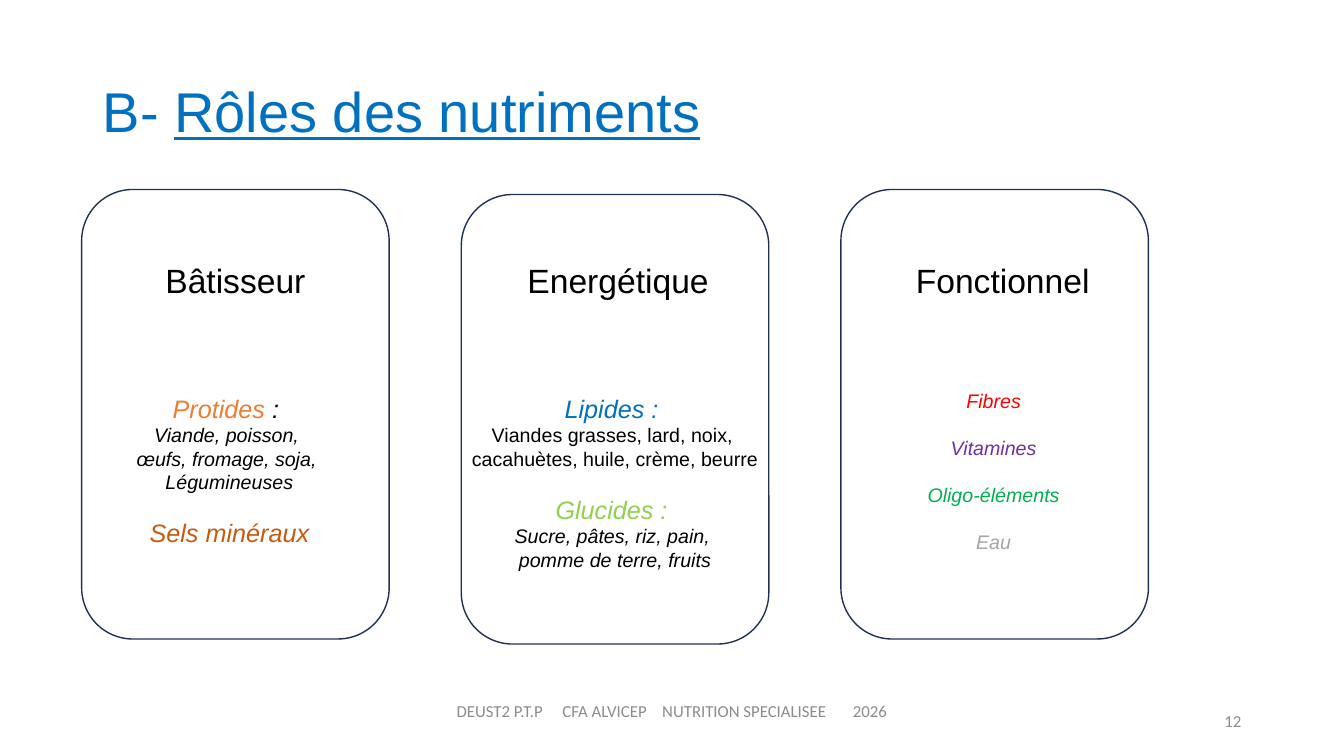
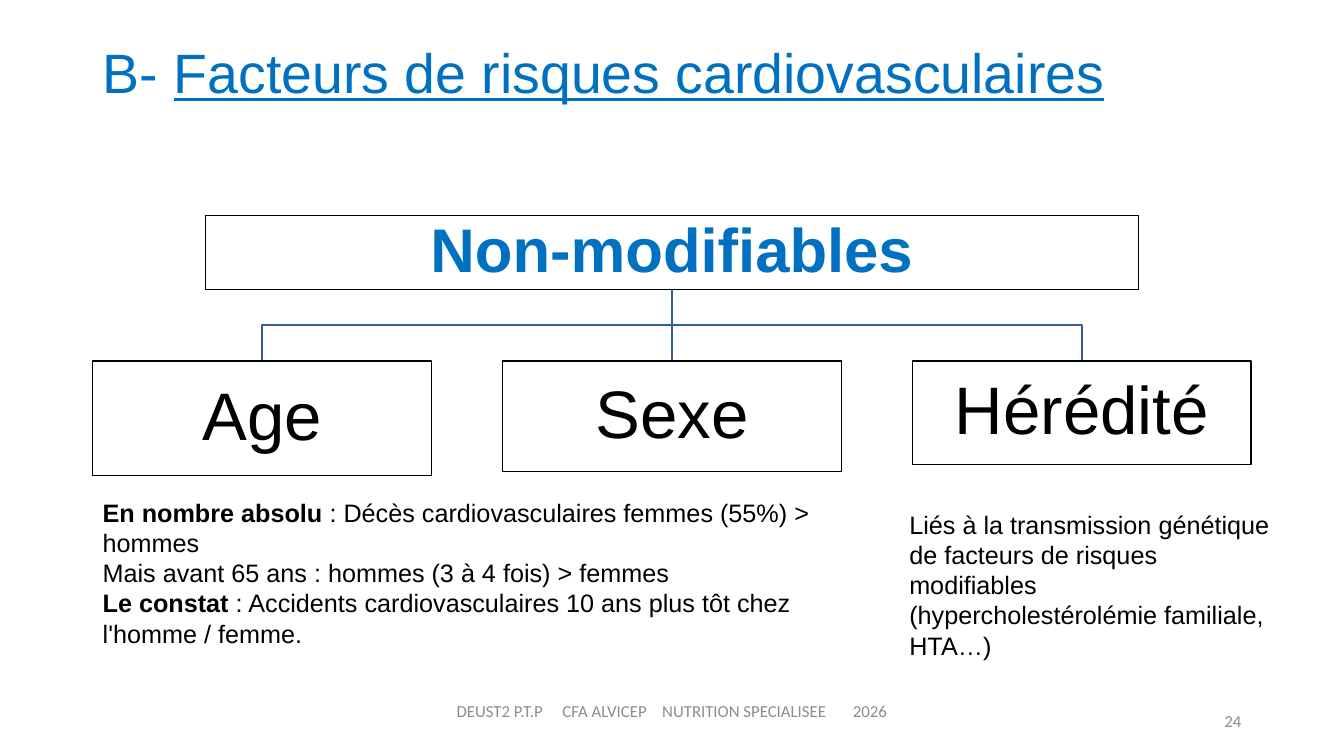
"""Build two nutrition course slides: nutrient roles and cardiovascular risk factors."""
import pptx
import pptx.dml.color
import pptx.enum.shapes
import pptx.enum.text
import pptx.oxml.ns
import pptx.util
from lxml import etree

Inches = pptx.util.Inches
Pt = pptx.util.Pt
ALIGN = pptx.enum.text.PP_ALIGN
ANCHOR = pptx.enum.text.MSO_ANCHOR
SHAPE = pptx.enum.shapes.MSO_SHAPE

WIDTH, HEIGHT = 13.33, 7.5
MARGIN = 0.92
BLACK, WHITE, BLUE, GREY = "000000", "FFFFFF", "0070C0", "8C8C8C"
CARD_LINE, TREE_LINE = "1E3256", "365B9D"
ORANGE, RUST, LIME = "ED7D31", "C55A11", "92D050"
BLANK_LINE = 16.8

FOOTER = ["DEUST2 P.T.P", "CFA ALVICEP", "NUTRITION SPECIALISEE", "2026"]
FOOTER_TABS = [1.05, 2.04, 3.93]
FOOTER_STYLE = {"size": 12, "name": "Calibri", "color": GREY}

GROUP = {"size": 18, "italic": True}
FOOD = {"size": 14, "italic": True}
PLAIN_FOOD = {"size": 14}
BODY = {"size": 18}
STRONG = {"size": 18, "bold": True}

ROLES = {
    "title": "Rôles des nutriments", "size": 40, "height": 1.48, "number": "12",
    "cards": [
        {"name": "Bâtisseur", "top": 1.88, "name_shift": 0, "list_shift": -0.06, "list_top": 3.85,
         "lines": [
             (0, [("Protides ", {**GROUP, "color": ORANGE}), (": ", GROUP)]),
             (0, [("Viande, poisson, ", FOOD)]),
             (0, [("œufs, fromage, soja, ", FOOD)]),
             (0, [("Légumineuses", FOOD)]),
             (BLANK_LINE, [("Sels minéraux", {**GROUP, "color": RUST})])]},
        {"name": "Energétique", "top": 1.93, "name_shift": 0.03, "list_shift": 0, "list_top": 3.85,
         "lines": [
             (0, [("Lipides : ", {**GROUP, "color": BLUE})]),
             (0, [("Viandes grasses, lard, noix, ", PLAIN_FOOD)]),
             (0, [("cacahuètes, huile, crème, beurre", PLAIN_FOOD)]),
             (BLANK_LINE, [("Glucides : ", {**GROUP, "color": LIME})]),
             (0, [("Sucre, pâtes, riz, pain, ", FOOD)]),
             (0, [("pomme de terre, fruits", FOOD)])]},
        {"name": "Fonctionnel", "top": 1.88, "name_shift": 0.08, "list_shift": -0.01, "list_top": 3.81,
         "lines": [
             (0, [("Fibres", {**FOOD, "color": "FF0000"})]),
             (BLANK_LINE, [("Vitamines", {**FOOD, "color": "7030A0"})]),
             (BLANK_LINE, [("Oligo-éléments", {**FOOD, "color": "00B050"})]),
             (BLANK_LINE, [("Eau", {**FOOD, "color": "A5A5A5"})])]},
    ],
}

RISKS = {
    "title": "Facteurs de risques cardiovasculaires", "size": 39.6, "height": 0.71, "number": "24",
    "root": "Non-modifiables",
    "factors": [("Age", 1.14), ("Sexe", 1.1), ("Hérédité", 1.03)],
    "notes": [
        ((MARGIN, 4.88, 7.49, 1.85), [
            (0, [("En nombre absolu", STRONG),
                 (" : Décès cardiovasculaires femmes (55%) > hommes", BODY)]),
            (0, [("Mais avant 65 ans : hommes (3 à 4 fois) > femmes", BODY)]),
            (0, [("Le constat", STRONG),
                 (" : Accidents cardiovasculaires 10 ans plus tôt chez l'homme / femme.", BODY)])]),
        ((8.92, 5, 3.89, 1.62), [
            (0, [("Liés à la transmission génétique de facteurs de risques modifiables", BODY)]),
            (0, [("(hypercholestérolémie familiale, HTA…)", BODY)])]),
    ],
}


def rgb(value):
    """Turn a hex string into a colour."""
    return pptx.dml.color.RGBColor.from_string(value)


def assign(target, values):
    """Set each attribute in a dict of format values."""
    for name, value in values.items():
        setattr(target, name, value)


def write(frame, lines, align=ALIGN.LEFT, **settings):
    """Fill a text frame with (space before, styled spans) lines."""
    assign(frame, {"word_wrap": True, **settings})
    for index, (before, spans) in enumerate(lines):
        para = frame.paragraphs[0] if index == 0 else frame.add_paragraph()
        assign(para, {"alignment": align, "space_before": Pt(before)})
        for text, style in spans:
            span = para.add_run()
            span.text = text
            values = {"name": "Arial", "color": BLACK, **style}
            span.font.color.rgb = rgb(values.pop("color"))
            values["size"] = Pt(values["size"])
            assign(span.font, values)


def add_text(page, area, lines, **settings):
    """Add a text box and return its frame."""
    box = page.shapes.add_textbox(*map(Inches, area))
    write(box.text_frame, lines, **settings)
    return box.text_frame


def outline(shape, line, fill=None):
    """Give a shape a thin line, an optional fill and no shadow."""
    shape.shadow.inherit = False
    if fill:
        shape.fill.solid()
        shape.fill.fore_color.rgb = rgb(fill)
    else:
        shape.fill.background()
    shape.line.color.rgb = rgb(line)
    shape.line.width = Pt(1)


def add_panel(page, kind, area, line, fill=None):
    """Add an outlined preset shape."""
    panel = page.shapes.add_shape(kind, *map(Inches, area))
    outline(panel, line, fill)
    return panel


def add_trunk(page, *ends):
    """Add the straight branch of the tree."""
    trunk = page.shapes.add_connector(pptx.enum.shapes.MSO_CONNECTOR.STRAIGHT, *map(Inches, ends))
    trunk.line.color.rgb = rgb(TREE_LINE)
    trunk.line.width = Pt(1)
    etree.SubElement(trunk._element.spPr, pptx.oxml.ns.qn("a:effectLst"))


def add_branch(page, start, *points):
    """Add a bent branch of the tree."""
    builder = page.shapes.build_freeform(*map(Inches, start))
    builder.add_line_segments([tuple(map(Inches, point)) for point in points], close=False)
    outline(builder.convert_to_shape(), TREE_LINE)


def add_page(deck, content):
    """Add a slide with the shared title, footer and number."""
    page = deck.slides.add_slide(deck.slide_layouts[5])
    title = page.shapes.title
    area = (MARGIN, 0.39, 11.5, content["height"])
    assign(title, dict(zip(("left", "top", "width", "height"), map(Inches, area))))
    style = {"size": content["size"], "color": BLUE}
    write(title.text_frame,
          [(0, [("B- ", style), (content["title"], {**style, "underline": True})])],
          vertical_anchor=ANCHOR.MIDDLE, auto_size=pptx.enum.text.MSO_AUTO_SIZE.NONE)
    title.text_frame.paragraphs[0].line_spacing = 0.9

    footer = add_text(page, (4.43, 6.85, 4.5, 0.4), [(0, [("\t".join(FOOTER), FOOTER_STYLE)])],
                      vertical_anchor=ANCHOR.MIDDLE)
    tabs = etree.SubElement(footer.paragraphs[0]._p.get_or_add_pPr(), pptx.oxml.ns.qn("a:tabLst"))
    for position in FOOTER_TABS:
        etree.SubElement(tabs, pptx.oxml.ns.qn("a:tab"), pos=str(Inches(position)), algn="l")
    add_text(page, (9.41, 6.95, 3, 0.4), [(0, [(content["number"], FOOTER_STYLE)])],
             align=ALIGN.RIGHT, vertical_anchor=ANCHOR.MIDDLE)
    return page


def build_roles(deck):
    """Build the three cards of nutrient roles."""
    page = add_page(deck, ROLES)
    left, width, height, pitch = 0.81, 3.05, 4.46, 3.765
    for index, card in enumerate(ROLES["cards"]):
        x = left + index * pitch
        add_panel(page, SHAPE.ROUNDED_RECTANGLE, (x, card["top"], width, height), CARD_LINE)
        add_text(page, (x + card["name_shift"], 2.53, width, 0.5),
                 [(0, [(card["name"], {"size": 24})])], align=ALIGN.CENTER)
        add_text(page, (x + card["list_shift"], card["list_top"], width, 1.88),
                 card["lines"], align=ALIGN.CENTER, word_wrap=False)


def build_risks(deck):
    """Build the tree of risk factors and its notes."""
    page = add_page(deck, RISKS)
    center, width, pitch = WIDTH / 2, 3.36, 4.065
    root_top, root_width, root_height, gap = 2.14, 9.25, 0.73, 0.71
    root_bottom = root_top + root_height
    row_top, bar = root_bottom + gap, root_bottom + gap / 2
    nodes = [(RISKS["root"], (center - root_width / 2, root_top, root_width, root_height),
              {"size": 44, "color": BLUE, "bold": True})]
    for index, (name, height) in enumerate(RISKS["factors"]):
        middle = center + (index - 1) * pitch
        nodes.append((name, (middle - width / 2, row_top, width, height), {"size": 48}))
        if middle == center:
            add_trunk(page, center, root_bottom, center, row_top)
        else:
            add_branch(page, (center, root_bottom), (center, bar), (middle, bar), (middle, row_top))

    insets = {"margin_" + side: Inches(0.03) for side in ("left", "right", "top", "bottom")}
    for name, area, style in nodes:
        panel = add_panel(page, SHAPE.RECTANGLE, area, BLACK, WHITE)
        write(panel.text_frame, [(0, [(name, style)])], align=ALIGN.CENTER,
              vertical_anchor=ANCHOR.MIDDLE, **insets)
        panel.text_frame.paragraphs[0].line_spacing = 0.9
    for area, lines in RISKS["notes"]:
        add_text(page, area, lines)


def main():
    """Build and save the deck."""
    deck = pptx.Presentation()
    assign(deck, {"slide_width": Inches(WIDTH), "slide_height": Inches(HEIGHT)})
    build_roles(deck)
    build_risks(deck)
    deck.save("out.pptx")


if __name__ == "__main__":
    main()
